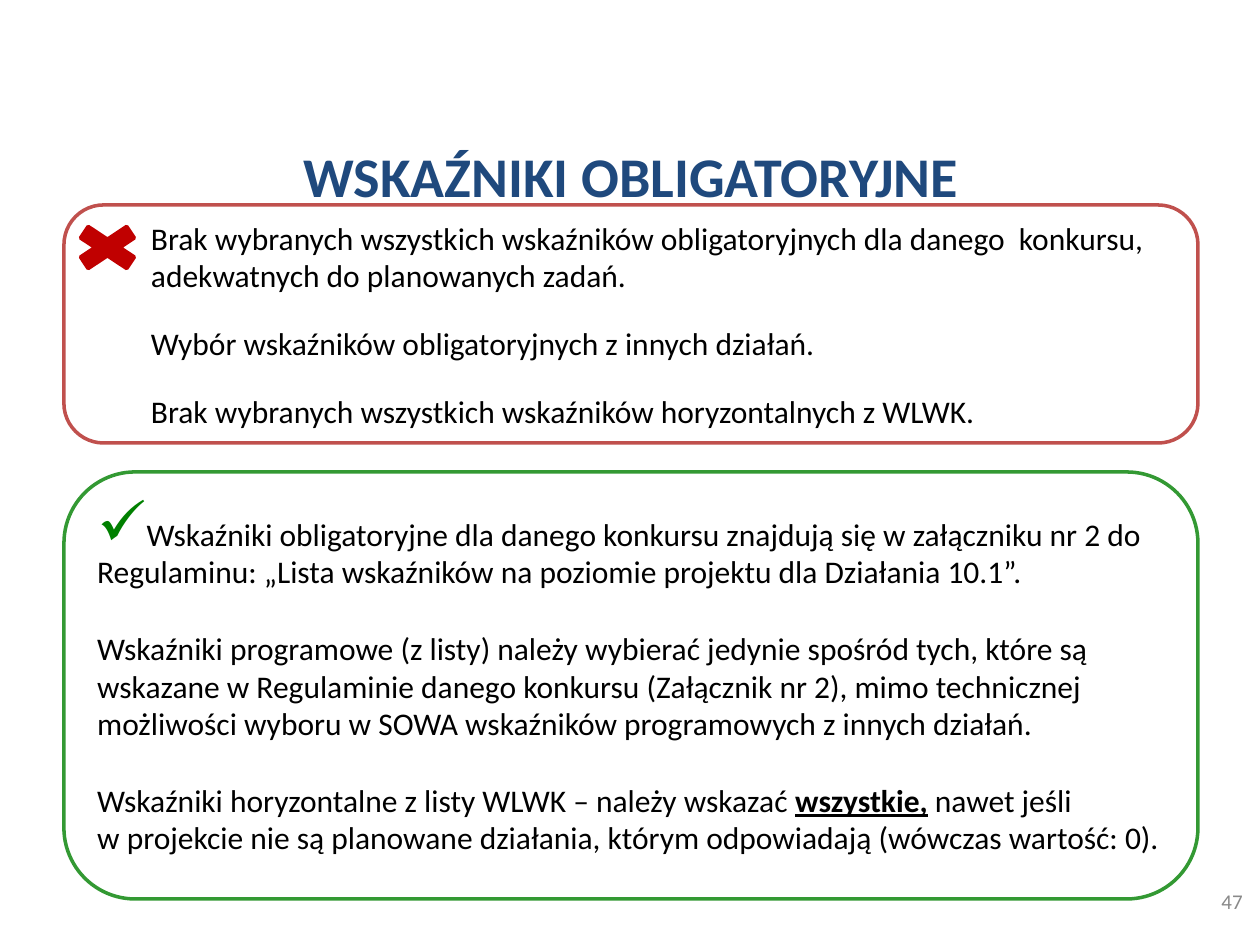
import pptx
import pptx.util
import pptx.dml.color
import pptx.enum.shapes
import pptx.enum.text
import pptx.oxml.ns
import lxml.etree

PX = 914400 / 126
FONT = "Calibri"
SHAPE = pptx.enum.shapes.MSO_SHAPE
ALIGN = pptx.enum.text.PP_ALIGN

TITLE = "WSKAŹNIKI OBLIGATORYJNE"
PAGE = "47"
ERRORS = [
    "Brak wybranych wszystkich wskaźników obligatoryjnych dla danego  konkursu, "
    "adekwatnych do planowanych zadań.",
    "Wybór wskaźników obligatoryjnych z innych działań.",
    "Brak wybranych wszystkich wskaźników horyzontalnych z WLWK.",
]
# Text and space before, in points
RULES = [
    ("Wskaźniki obligatoryjne dla danego konkursu znajdują się w załączniku nr 2 do", 0),
    ("Regulaminu: „Lista wskaźników na poziomie projektu dla Działania 10.1”.", 0),
    ("Wskaźniki programowe (z listy) należy wybierać jedynie spośród tych, które są "
     "wskazane w Regulaminie danego konkursu (Załącznik nr 2), mimo technicznej "
     "możliwości wyboru w SOWA wskaźników programowych z innych działań.", 22),
    ("Wskaźniki horyzontalne z listy WLWK – należy wskazać ", 22),
]
STRESS = "wszystkie,"
TAIL = (" nawet jeśli ",
        "w projekcie nie są planowane działania, którym odpowiadają (wówczas wartość: 0).")


def px(n):
    return pptx.util.Emu(round(n * PX))


def rgb(code):
    return pptx.dml.color.RGBColor.from_string(code)


def style(para, size, color="000000", align=ALIGN.LEFT, bold=None, before=0):
    para.alignment = align
    para.space_before = pptx.util.Pt(before)
    font = para.font
    font.name, font.size, font.bold = FONT, pptx.util.Pt(size), bold
    font.color.rgb = rgb(color)


def setup(frame):
    frame.word_wrap = True
    frame.vertical_anchor = pptx.enum.text.MSO_ANCHOR.MIDDLE
    return frame


def label(slide, box, text, *look):
    frame = setup(slide.shapes.add_textbox(*map(px, box)).text_frame)
    para = frame.paragraphs[0]
    para.text = text
    style(para, *look)


def shape(slide, kind, box, line, fill=None):
    item = slide.shapes.add_shape(kind, *map(px, box))
    item.shadow.inherit = False
    if fill:
        item.fill.solid()
        item.fill.fore_color.rgb = rgb(fill)
    else:
        item.fill.background()
    item.line.color.rgb = rgb(line)
    item.line.width = pptx.util.Pt(2)
    return item


def write(frame, items):
    """Add one paragraph per (text, space before) pair."""
    setup(frame)
    for i, (text, before) in enumerate(items):
        para = frame.add_paragraph() if i else frame.paragraphs[0]
        para.add_run().text = text
        style(para, 18, before=before)
    return frame.paragraphs


def indent(para, left, first=0):
    props = para._p.get_or_add_pPr()
    props.set("marL", str(px(left)))
    props.set("indent", str(px(first)))
    return props


def tick(para):
    """Give the paragraph a green check mark, twice the text size."""
    props = indent(para, 39, -39)
    qn = pptx.oxml.ns.qn
    color = lxml.etree.Element(qn("a:buClr"))
    lxml.etree.SubElement(color, qn("a:srgbClr"), val="008000")
    size = lxml.etree.Element(qn("a:buSzPct"), val="200000")
    mark = lxml.etree.Element(qn("a:buChar"), char="✓")
    last = props.find(qn("a:defRPr"))
    for part in (color, size, mark):
        last.addprevious(part)


def main():
    deck = pptx.Presentation()
    deck.slide_width, deck.slide_height = px(1260), px(945)
    slide = deck.slides.add_slide(deck.slide_layouts[6])

    label(slide, (64, 145, 1134, 60), TITLE, 32, "1F497D", ALIGN.CENTER, True)

    red = shape(slide, SHAPE.ROUNDED_RECTANGLE, (64, 205, 1134, 238), "C0504D")
    gaps = [(text, 17 if i else 0) for i, text in enumerate(ERRORS)]
    for para in write(red.text_frame, gaps):
        indent(para, 63)

    green = shape(slide, SHAPE.ROUNDED_RECTANGLE, (64, 472, 1134, 427), "339933")
    paras = write(green.text_frame, RULES)
    tick(paras[0])
    last = paras[-1]
    run = last.add_run()
    run.text = STRESS
    run.font.bold = run.font.underline = True
    last.add_run().text = TAIL[0]
    last.add_line_break()
    last.add_run().text = TAIL[1]

    shape(slide, SHAPE.MATH_MULTIPLY, (63, 218, 89, 59), "C00000", "C00000")
    label(slide, (961, 876, 294, 50), PAGE, 12, "898989", ALIGN.RIGHT)
    deck.save("out.pptx")


if __name__ == "__main__":
    main()
